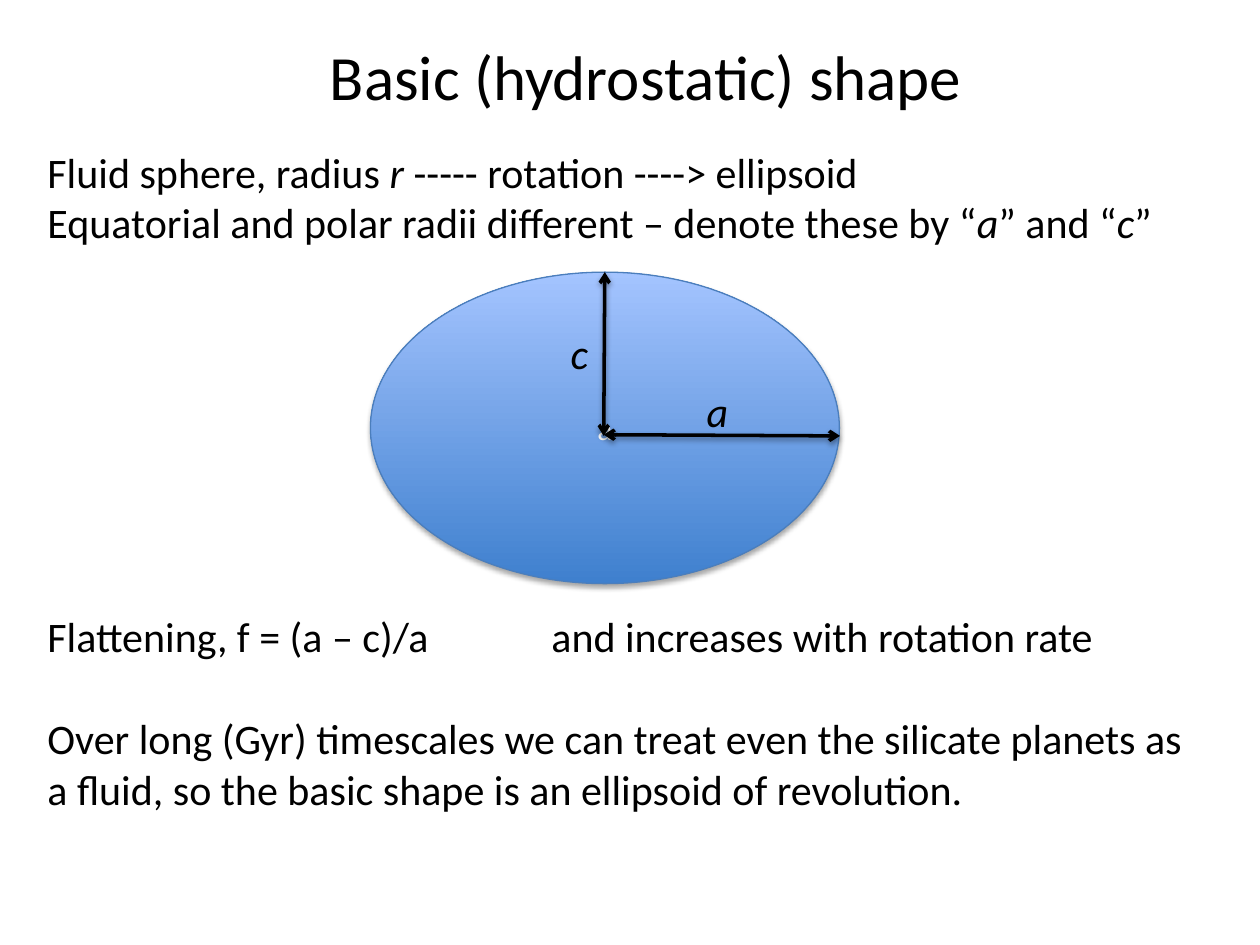
import pptx
import pptx.util
import pptx.oxml
import pptx.dml.color
import pptx.enum.shapes
import pptx.enum.text
import pptx.oxml.ns

Pt = pptx.util.Pt
CENTER = pptx.enum.text.PP_ALIGN.CENTER
BLACK = "000000"


def rgb(color):
    """Return the colour for a hex string."""
    return pptx.dml.color.RGBColor.from_string(color)


def append_xml(parent, xml):
    """Append a drawing element, given as XML with a bare tag, to a parent."""
    tag, rest = xml.split(" ", 1)
    ns = pptx.oxml.ns.nsdecls("a")
    parent.append(pptx.oxml.parse_xml(f"{tag} {ns} {rest}"))


def add_shadow(s, opacity, dist):
    """Give a shape or connector a soft shadow straight below it."""
    append_xml(s._element.spPr, (
        f'<a:effectLst ><a:outerShdw blurRad="{Pt(3.1)}" dist="{Pt(dist)}" '
        f'dir="5400000" rotWithShape="0"><a:srgbClr val="{BLACK}">'
        f'<a:alpha val="{opacity * 1000}"/></a:srgbClr>'
        '</a:outerShdw></a:effectLst>'))


def format_run(r, size, color=BLACK, italic=False):
    """Set the font of a run."""
    r.font.name = "Calibri"
    r.font.size = Pt(size)
    r.font.color.rgb = rgb(color)
    r.font.italic = italic


def add_text(s, box, paragraphs, size=24, align=None):
    """Add a text box; each paragraph is a list of (text, italic) runs."""
    sp = s.shapes.add_textbox(*map(Pt, box))
    tf = sp.text_frame
    tf.word_wrap = True
    for i, runs in enumerate(paragraphs):
        p = tf.add_paragraph() if i else tf.paragraphs[0]
        p.alignment = align
        for text, italic in runs:
            r = p.add_run()
            r.text = text
            format_run(r, size, italic=italic)
    return tf


def add_ellipsoid(s, box, label):
    """Add the shaded ellipse with its small central label."""
    oval = pptx.enum.shapes.MSO_SHAPE.OVAL
    sp = s.shapes.add_shape(oval, *map(Pt, box))
    sp.fill.gradient()
    sp.fill.gradient_angle = 90
    for stop, color in zip(sp.fill.gradient_stops, ("3F80CE", "A4C4FF")):
        stop.color.rgb = rgb(color)
    sp.line.color.rgb = rgb("4B7EBC")
    sp.line.width = Pt(0.75)
    add_shadow(sp, 35, 1.8)
    tf = sp.text_frame
    tf.text = label
    tf.vertical_anchor = pptx.enum.text.MSO_ANCHOR.MIDDLE
    p = tf.paragraphs[0]
    p.alignment = CENTER
    format_run(p.runs[0], 18, "FFFFFF")


def add_radius(s, start, end):
    """Add a double-headed arrow that marks a radius."""
    straight = pptx.enum.shapes.MSO_CONNECTOR.STRAIGHT
    c = s.shapes.add_connector(straight, *map(Pt, start + end))
    c.line.color.rgb = rgb(BLACK)
    c.line.width = Pt(2)
    for tag in ("headEnd", "tailEnd"):
        append_xml(c.line._get_or_add_ln(), f'<a:{tag} type="arrow"/>')
    add_shadow(c, 38, 1.6)


def main():
    """Build the slide and save it."""
    prs = pptx.Presentation()
    prs.slide_width, prs.slide_height = Pt(720), Pt(540)
    s = prs.slides.add_slide(prs.slide_layouts[6])

    add_text(s, (36, 18, 666, 51), [[("Basic (hydrostatic) shape", False)]],
             36, CENTER)
    add_text(s, (20, 80, 682, 124), [
        [("Fluid sphere, radius ", False), ("r", True),
         (" ----- rotation ----> ellipsoid", False)],
        [("Equatorial and polar radii different – denote these by “", False),
         ("a", True), ("” and “", False), ("c", True), ("”", False)],
    ])

    add_ellipsoid(s, (211.7, 155.5, 268, 178), "a")
    add_radius(s, (345, 248.4), (480, 249.1))
    add_radius(s, (345, 249.1), (345.6, 155.5))
    add_text(s, (396.7, 216.7, 33, 36), [[("a", True)]])
    add_text(s, (319, 183.6, 33, 36), [[("c", True)]])

    tf = add_text(s, (20, 345.6, 674, 124), [
        [("Flattening, f = (a – c)/a\tand increases with rotation rate",
          False)],
        [("Over long (Gyr) timescales we can treat even the silicate planets "
          "as a fluid, so the basic shape is an ellipsoid of revolution.",
          False)],
    ])
    formula, conclusion = tf.paragraphs
    append_xml(formula._p.get_or_add_pPr(),
               f'<a:tabLst ><a:tab pos="{Pt(288)}" algn="l"/></a:tabLst>')
    conclusion.space_before = Pt(29.3)

    prs.save("out.pptx")


if __name__ == "__main__":
    main()
